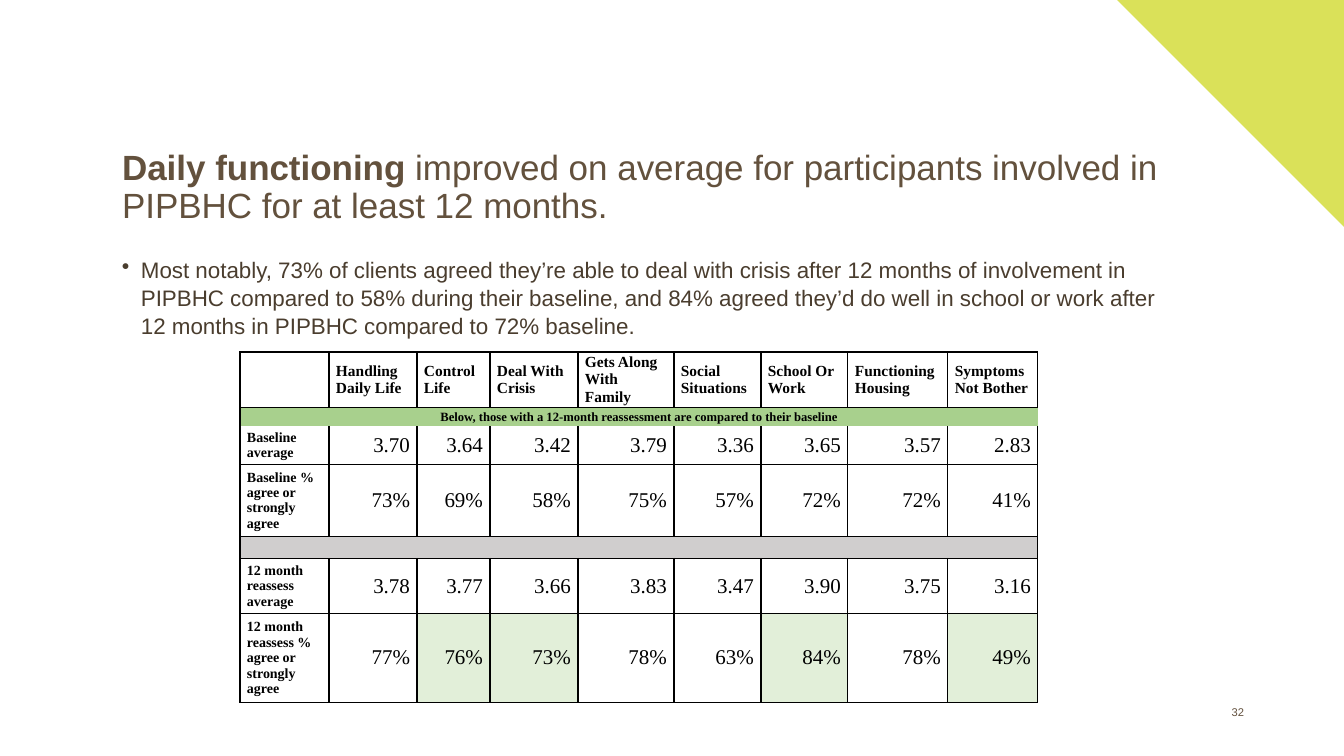
import pptx
import pptx.util
import pptx.dml.color
import pptx.enum.shapes
import pptx.enum.text
import pptx.oxml
import pptx.oxml.ns
import lxml.etree

PX = 9525 * 96 / 100.8  # EMU in one px
COLORS = {"lime": "DAE159", "title": "63513D", "body": "4A3D2E", "number": "63513F",
          "black": "000000", "white": "FFFFFF", "band": "A8D08D", "gap": "D0CECE",
          "highlight": "E2EFD9"}
ALIGN = pptx.enum.text.PP_ALIGN
MIDDLE = pptx.enum.text.MSO_ANCHOR.MIDDLE
TABLE_FONT = "Times New Roman"


def px(*lengths):
    return [round(length * PX) for length in lengths]


def write(para, text, size, color, font="Arial", bold=False, align=ALIGN.LEFT, spacing=1.0):
    para.alignment = align
    para.line_spacing = spacing
    span = para.add_run()
    span.text = text
    span.font.size = pptx.util.Pt(size)
    span.font.name = font
    span.font.bold = bold
    span.font.color.rgb = pptx.dml.color.RGBColor.from_string(COLORS[color])


deck = pptx.Presentation()
deck.slide_width, deck.slide_height = px(1344, 756)
page = deck.slides.add_slide(deck.slide_layouts[5])

# Corner triangle
corner = page.shapes.add_shape(pptx.enum.shapes.MSO_SHAPE.RIGHT_TRIANGLE, *px(1117, 0, 227, 227))
corner.rotation = 180
corner.shadow.inherit = False
corner.fill.solid()
corner.fill.fore_color.rgb = pptx.dml.color.RGBColor.from_string(COLORS["lime"])
corner.line.fill.background()

# Title
title = page.shapes.title
title.left, title.top, title.width, title.height = px(112, 164, 1111, 86)
frame = title.text_frame
frame.word_wrap = True
frame.auto_size = pptx.enum.text.MSO_AUTO_SIZE.NONE
frame.vertical_anchor = MIDDLE
frame.margin_top, frame.margin_bottom = px(0, 38)
write(frame.paragraphs[0], "Daily functioning", 25, "title", bold=True, spacing=0.9)
write(frame.paragraphs[0], " improved on average for participants involved in PIPBHC "
      "for at least 12 months.", 25, "title", spacing=0.9)

# Bullet
box = page.shapes.add_textbox(*px(112, 250, 1054, 140))
box.text_frame.word_wrap = True
para = box.text_frame.paragraphs[0]
indent = px(19)[0]
properties = para._p.get_or_add_pPr()
properties.set("marL", str(indent))
properties.set("indent", str(-indent))
bullet = lxml.etree.SubElement(properties, pptx.oxml.ns.qn("a:buChar"))
bullet.set("char", "•")
write(para, "Most notably, 73% of clients agreed they’re able to deal with crisis after 12 months "
      "of involvement in PIPBHC compared to 58% during their baseline, and 84% agreed they’d do "
      "well in school or work after 12 months in PIPBHC compared to 72% baseline.",
      16, "body", spacing=1.05)

# Functioning table
COLUMNS = [89, 88, 73, 88, 96, 87, 87, 100, 90]
ROWS = [51, 19, 38, 72, 22, 55, 89]
HEADER, BAND, BASELINE, GAP, LAST = 0, 1, 2, 4, 6
CONTENT = [
    ["", "Handling Daily Life", "Control Life", "Deal With Crisis", "Gets Along With Family",
     "Social Situations", "School Or Work", "Functioning Housing", "Symptoms Not Bother"],
    ["Below, those with a 12-month reassessment are compared to their baseline"] + [""] * 8,
    ["Baseline average", "3.70", "3.64", "3.42", "3.79", "3.36", "3.65", "3.57", "2.83"],
    ["Baseline % agree or strongly agree",
     "73%", "69%", "58%", "75%", "57%", "72%", "72%", "41%"],
    [""] * 9,
    ["12 month reassess average",
     "3.78", "3.77", "3.66", "3.83", "3.47", "3.90", "3.75", "3.16"],
    ["12 month reassess % agree or strongly agree",
     "77%", "76%", "73%", "78%", "63%", "84%", "78%", "49%"],
]
HIGHLIGHTED = ["Control Life", "Deal With Crisis", "School Or Work", "Symptoms Not Bother"]
FULL_ROWS = {BAND: "band", GAP: "gap"}

table = page.shapes.add_table(len(ROWS), len(COLUMNS),
                              *px(240, 352, sum(COLUMNS), sum(ROWS))).table
table.first_row = table.horz_banding = False
for column, width in zip(table.columns, px(*COLUMNS)):
    column.width = width
for row, height in zip(table.rows, px(*ROWS)):
    row.height = height
for r in FULL_ROWS:
    table.cell(r, 0).merge(table.cell(r, len(COLUMNS) - 1))

for r, texts in enumerate(CONTENT):
    for c, text in enumerate(texts):
        cell = table.cell(r, c)
        cell.vertical_anchor = MIDDLE
        cell.margin_left, cell.margin_right, cell.margin_top, cell.margin_bottom = px(7, 7, 0, 0)

        hidden = {BAND: ["R", "B"], BASELINE: ["T"]}.get(r, [])
        if cell.is_spanned:
            hidden = hidden + ["L"] + (["R"] if c < len(COLUMNS) - 1 else [])
        for side in "LRTB":
            line = lxml.etree.SubElement(cell._tc.get_or_add_tcPr(),
                                         pptx.oxml.ns.qn("a:ln" + side), w="12700")
            if side in hidden:
                lxml.etree.SubElement(line, pptx.oxml.ns.qn("a:noFill"))
            else:
                solid = lxml.etree.SubElement(line, pptx.oxml.ns.qn("a:solidFill"))
                lxml.etree.SubElement(solid, pptx.oxml.ns.qn("a:srgbClr"), val=COLORS["black"])

        fill = FULL_ROWS.get(r, "white")
        if r == LAST and CONTENT[HEADER][c] in HIGHLIGHTED:
            fill = "highlight"
        cell.fill.solid()
        cell.fill.fore_color.rgb = pptx.dml.color.RGBColor.from_string(COLORS[fill])

        para = cell.text_frame.paragraphs[0]
        if not text:
            lxml.etree.SubElement(para._p, pptx.oxml.ns.qn("a:endParaRPr"), sz="900")
        elif r == HEADER:
            write(para, text, 11, "black", TABLE_FONT, bold=True)
        elif r == BAND:
            write(para, text, 9, "black", TABLE_FONT, bold=True, align=ALIGN.CENTER)
        elif c == 0:
            write(para, text, 10, "black", TABLE_FONT, bold=True)
        else:
            write(para, text, 15, "black", TABLE_FONT, align=ALIGN.RIGHT)

# Page number
number = page.shapes.add_textbox(*px(952, 701, 302, 23))
number.text_frame.word_wrap = True
number.text_frame.vertical_anchor = MIDDLE
write(number.text_frame.paragraphs[0], "32", 8, "number", align=ALIGN.RIGHT, spacing=0.9)

deck.save("out.pptx")
